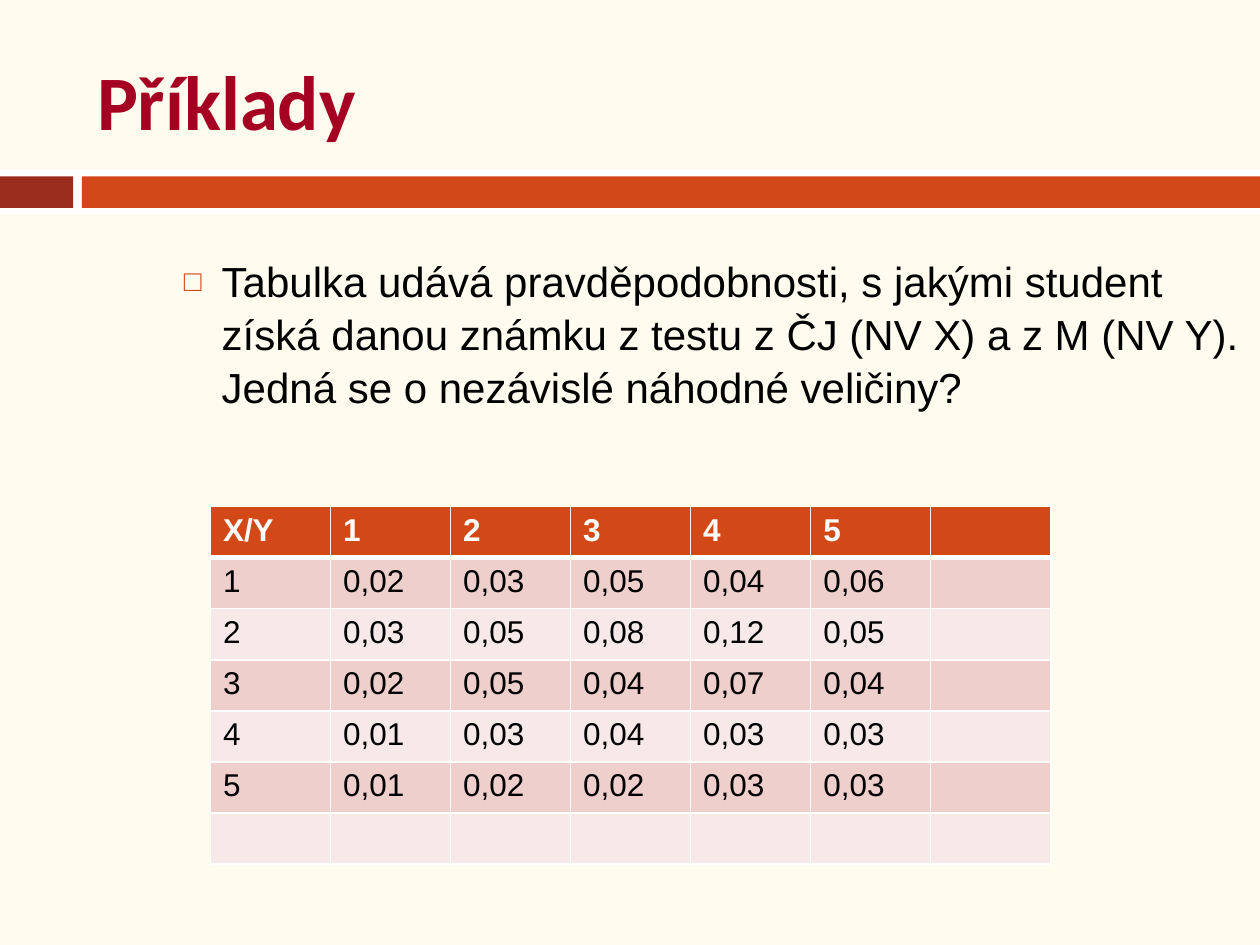
from pptx import Presentation, util as u
from pptx.dml.color import RGBColor
from pptx.enum import shapes, text
from pptx.oxml import parse_xml
from pptx.oxml.ns import nsdecls

# Content
TITLE = "Příklady"
TASK = ("Tabulka udává pravděpodobnosti, s jakými student získá danou známku "
        "z testu z ČJ (NV X) a z M (NV Y). Jedná se o nezávislé náhodné veličiny?")
GRADES = ["1", "2", "3", "4", "5"]
PROBS = [
    ["0,02", "0,03", "0,05", "0,04", "0,06"],
    ["0,03", "0,05", "0,08", "0,12", "0,05"],
    ["0,02", "0,05", "0,04", "0,07", "0,04"],
    ["0,01", "0,03", "0,04", "0,03", "0,03"],
    ["0,01", "0,02", "0,02", "0,03", "0,03"],
]
# The last column and row stay empty for the marginal sums
ROWS = [["X/Y", *GRADES, ""]]
ROWS += [[g, *probs, ""] for g, probs in zip(GRADES, PROBS)]
ROWS += [[""] * len(ROWS[0])]

# Style
CREAM, WHITE, BLACK = "FFFCEF", "FFFFFF", "000000"
ORANGE, BRICK, CRIMSON = "D34817", "9B2D1F", "A50021"
STRIPES = ["F7E9E8", "EFCFCC"]
BANDS = [  # left, top, width, height, colour
    (0, 1.35, 10, 0.35, WHITE),
    (0, 1.4, 0.58, 0.25, BRICK),
    (0.65, 1.4, 9.35, 0.25, ORANGE),
]


def paint(fill, color):
    fill.solid()
    fill.fore_color.rgb = RGBColor.from_string(color)


def style(p, size, font, color, bold=False):
    for r in p.runs:
        r.font.size, r.font.name, r.font.bold = u.Pt(size), font, bold
        r.font.color.rgb = RGBColor.from_string(color)


def place(sp, *box):
    sp.left, sp.top, sp.width, sp.height = map(u.Inches, box)


def border(cell, side, points):
    cell._tc.get_or_add_tcPr().append(parse_xml(
        f'<a:ln{side} {nsdecls("a")} w="{u.Pt(points)}"><a:solidFill>'
        f'<a:srgbClr val="{WHITE}"/></a:solidFill></a:ln{side}>'))


prs = Presentation()
prs.slide_width, prs.slide_height = u.Inches(10), u.Inches(7.5)
s = prs.slides.add_slide(prs.slide_layouts[1])
paint(s.background.fill, CREAM)

# Bands under the title
for *box, color in BANDS:
    sp = s.shapes.add_shape(shapes.MSO_SHAPE.RECTANGLE, *map(u.Inches, box))
    sp.shadow.inherit = False
    paint(sp.fill, color)
    sp.line.fill.background()

# Title
title = s.shapes.title
place(title, 0.67, 0.25, 8.92, 1.08)
tf = title.text_frame
tf.text = TITLE
tf.vertical_anchor = text.MSO_ANCHOR.MIDDLE
tf.auto_size = text.MSO_AUTO_SIZE.NONE
p = tf.paragraphs[0]
p.alignment = text.PP_ALIGN.LEFT
style(p, 44, "Calibri", CRIMSON, True)

# Task with a square bullet
body = s.placeholders[1]
place(body, 0.96, 1.96, 9.08, 4.92)
tf = body.text_frame
tf.text = TASK
tf.auto_size = text.MSO_AUTO_SIZE.NONE
p = tf.paragraphs[0]
p.level = 1
p.space_before = u.Pt(5.5)
p.line_spacing = 1.05
style(p, 24, "Arial", BLACK)
pPr = p._p.get_or_add_pPr()
pPr.set("marL", str(u.Inches(0.7)))
pPr.set("indent", str(u.Inches(-0.3)))
for bullet in (f'<a:buClr {nsdecls("a")}><a:srgbClr val="{ORANGE}"/></a:buClr>',
               f'<a:buSzPct {nsdecls("a")} val="70000"/>',
               f'<a:buChar {nsdecls("a")} char="□"/>'):
    pPr.append(parse_xml(bullet))

# Table of joint probabilities
n_rows, n_cols = len(ROWS), len(ROWS[0])
table = s.shapes.add_table(n_rows, n_cols, u.Inches(1.67), u.Inches(4.02),
                           u.Inches(6.67), u.Inches(2.84)).table
for i, row in enumerate(ROWS):
    header = i == 0
    for j, value in enumerate(row):
        cell = table.cell(i, j)
        for side, points in (("L", 1), ("R", 1), ("T", 3 if i == 1 else 1),
                             ("B", 3 if header else 1)):
            border(cell, side, points)
        paint(cell.fill, ORANGE if header else STRIPES[i % 2])
        if value:
            cell.text_frame.text = value
            style(cell.text_frame.paragraphs[0], 18, "Arial",
                  WHITE if header else BLACK, header)

prs.save("out.pptx")
